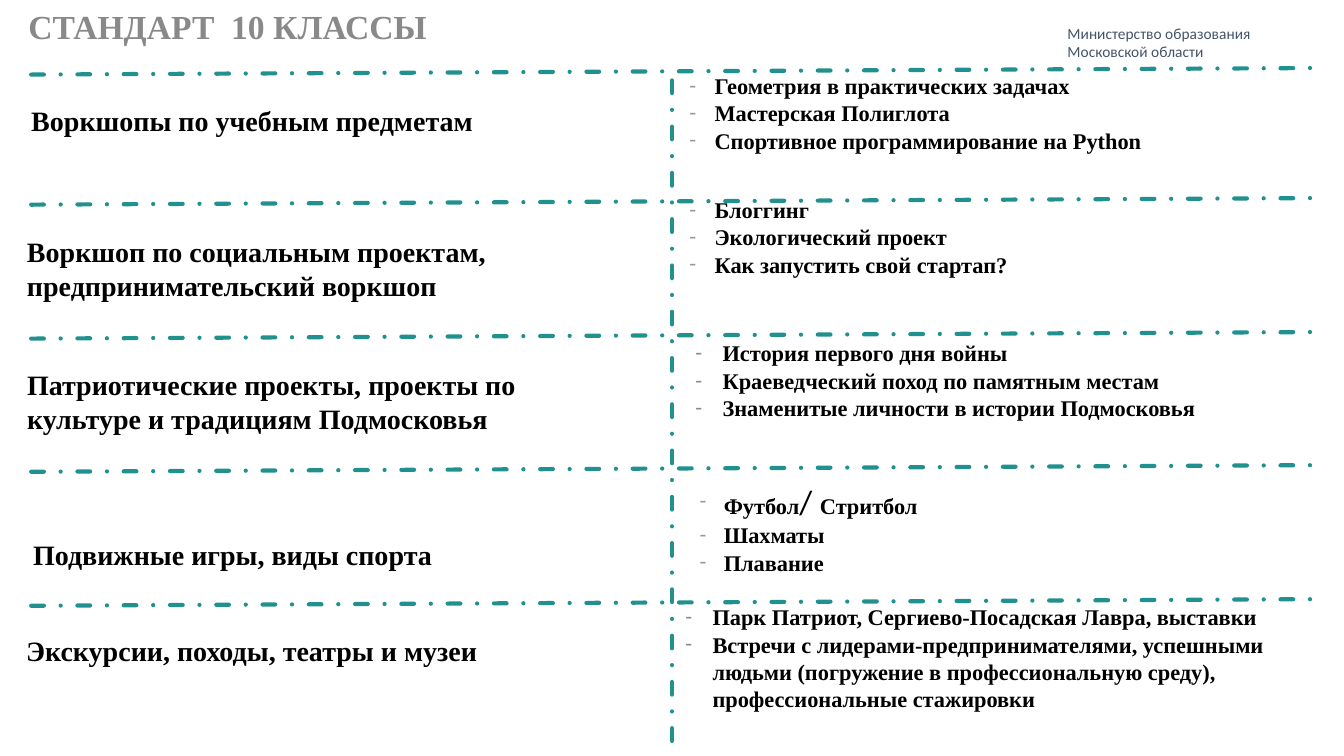
from lxml import etree
from pptx import Presentation
from pptx.dml.color import RGBColor
from pptx.enum import dml, shapes, text
from pptx.oxml.ns import qn
from pptx.util import Pt

TEAL = RGBColor(0x21, 0x91, 0x8F)
GRAY = RGBColor(0x89, 0x89, 0x89)
DASH_GRAY = RGBColor(0x99, 0x99, 0x99)
SLATE = RGBColor(0x44, 0x54, 0x6A)
BLACK = RGBColor(0, 0, 0)
SERIF = "Times New Roman"
SANS = "Calibri"
TOP = text.MSO_ANCHOR.TOP
MIDDLE = text.MSO_ANCHOR.MIDDLE

DIVIDER_STARTS = (53.3, 146.2, 241.9, 337, 432.7)
DIVIDER_RISE = 4.7

LABELS = (
    ("Воркшопы по учебным предметам", (22.3, 73.4, 430, 57.6), TOP, 0),
    ("Воркшоп по социальным проектам, предпринимательский воркшоп",
     (17.3, 164.9, 421, 53.3), MIDDLE, 2),
    ("Патриотические проекты, проекты по культуре и традициям Подмосковья",
     (17.3, 259.9, 408, 53.3), MIDDLE, 2),
    ("Подвижные игры, виды спорта", (21.6, 381, 340, 28.8), MIDDLE, 2),
    ("Экскурсии, походы, театры и музеи", (16.6, 450, 440, 28.8), MIDDLE, 2),
)

LISTS = (
    ((492.5, 51.1, 448, 93), 18, 20.9, DASH_GRAY,
     ("Геометрия в практических задачах", "Мастерская Полиглота",
      "Спортивное программирование на Python")),
    ((492.5, 139.7, 448, 93), 18, 20.9, DASH_GRAY,
     ("Блоггинг", "Экологический проект", "Как запустить свой стартап?")),
    ((496.8, 242.2, 448, 74), 19.4, 19.4, GRAY,
     ("История первого дня войны", "Краеведческий поход по памятным местам",
      "Знаменитые личности в истории Подмосковья")),
    ((499, 342.7, 448, 93), 18, 17.3, DASH_GRAY,
     ("Футбол/ Стритбол", "Шахматы", "Плавание")),
    ((489.6, 430.6, 448, 67), 19.4, 19.4, GRAY,
     ("Парк Патриот, Сергиево-Посадская Лавра, выставки",
      "Встречи с лидерами-предпринимателями, успешными людьми "
      "(погружение в профессиональную среду), профессиональные стажировки")),
)


def style(run, size, color, name=SERIF, bold=True):
    run.font.size = Pt(size)
    run.font.name = name
    run.font.bold = bold
    run.font.color.rgb = color


def add_frame(slide, box, anchor=TOP, inset_x=0, inset_y=0):
    frame = slide.shapes.add_textbox(*map(Pt, box)).text_frame
    frame.word_wrap = True
    frame.vertical_anchor = anchor
    frame.margin_left = frame.margin_right = Pt(inset_x)
    frame.margin_top = frame.margin_bottom = Pt(inset_y)
    return frame


def add_text(slide, content, box, size, color, anchor=TOP, inset=0):
    frame = add_frame(slide, box, anchor, inset, inset)
    frame.text = content
    paragraph = frame.paragraphs[0]
    paragraph.line_spacing = 1.02
    style(paragraph.runs[0], size, color)


def add_ministry(slide, box):
    frame = add_frame(slide, box, inset_x=9.4, inset_y=5)
    frame.text = "Министерство образования Московской области"
    style(frame.paragraphs[0].runs[0], 11, SLATE, SANS, False)


def add_dash_bullet(paragraph, margin, hanging, color):
    paragraph.line_spacing = 1.02
    properties = paragraph._p.get_or_add_pPr()
    properties.set("marL", str(Pt(margin)))
    properties.set("indent", str(-Pt(hanging)))
    bullet_color = etree.SubElement(properties, qn("a:buClr"))
    etree.SubElement(bullet_color, qn("a:srgbClr"), val=str(color))
    etree.SubElement(properties, qn("a:buFont"), typeface=SANS)
    etree.SubElement(properties, qn("a:buChar"), char="-")


def add_list(slide, box, margin, hanging, bullet_color, items):
    frame = add_frame(slide, box)
    for index, item in enumerate(items):
        paragraph = frame.add_paragraph() if index else frame.paragraphs[0]
        add_dash_bullet(paragraph, margin, hanging, bullet_color)
        before, slash, after = item.partition("/ ")
        for part in filter(None, (before, slash, after)):
            run = paragraph.add_run()
            run.text = part
            if part == slash:
                style(run, 24, BLACK, SANS, False)
            else:
                style(run, 16, BLACK)


def add_divider(slide, start, end):
    connector = slide.shapes.add_connector(
        shapes.MSO_CONNECTOR.STRAIGHT, *map(Pt, start + end))
    connector.line.color.rgb = TEAL
    connector.line.width = Pt(3)
    connector.line.dash_style = dml.MSO_LINE.DASH_DOT
    properties = connector._element.spPr
    properties.find(qn("a:ln")).set("cap", "rnd")
    etree.SubElement(properties, qn("a:effectLst"))


def add_grid(slide, left, right, middle, top, bottom):
    for y in DIVIDER_STARTS:
        add_divider(slide, (left, y), (right, y - DIVIDER_RISE))
    add_divider(slide, (middle, bottom), (middle, top))


def main():
    presentation = Presentation()
    presentation.slide_width = Pt(960)
    presentation.slide_height = Pt(540)
    slide = presentation.slides.add_slide(presentation.slide_layouts[6])
    add_text(slide, "СТАНДАРТ  10 КЛАССЫ", (20.2, 3.6, 719, 59), 24, GRAY)
    add_grid(slide, 22.3, 937.4, 480, 52.6, 529.2)
    for content, box, anchor, inset in LABELS:
        add_text(slide, content, box, 20, BLACK, anchor, inset)
    for programme in LISTS:
        add_list(slide, *programme)
    add_ministry(slide, (753.1, 12.2, 201.6, 50.4))
    presentation.save("out.pptx")


if __name__ == "__main__":
    main()
